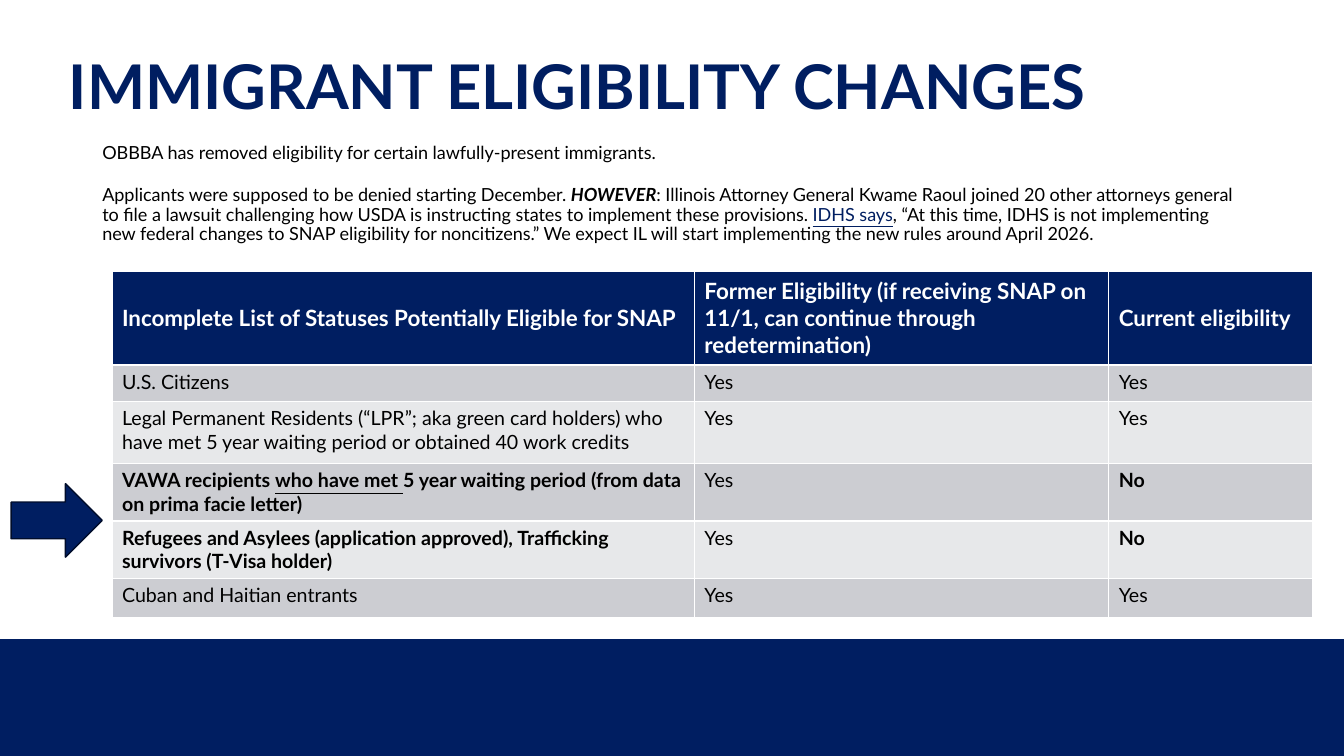
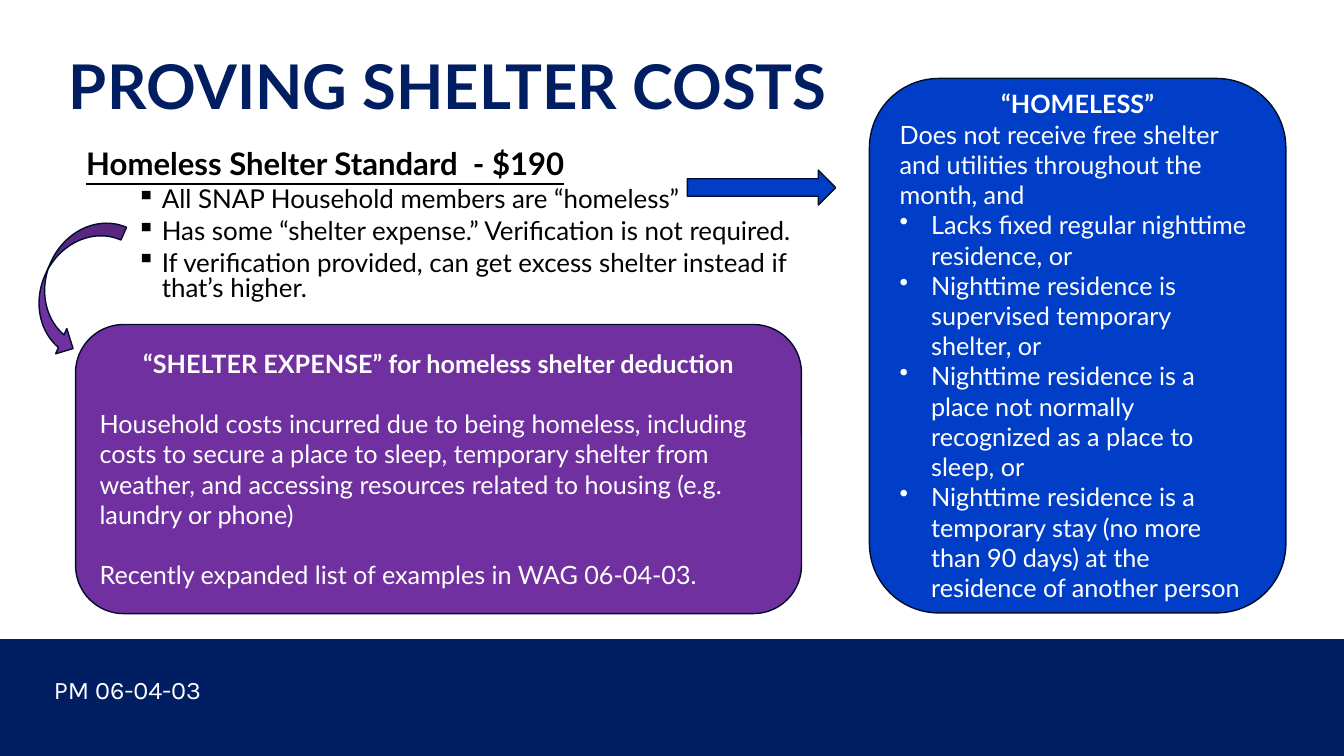
from dataclasses import dataclass

from lxml.etree import SubElement
from pptx import Presentation
from pptx.dml.color import RGBColor as Rgb
from pptx.enum.shapes import MSO_SHAPE as Shape
from pptx.enum.text import MSO_ANCHOR as Anchor, MSO_AUTO_SIZE as AutoSize, PP_ALIGN as Align
from pptx.oxml.ns import qn
from pptx.util import Pt


@dataclass(frozen=True)
class Theme:
    font: str = "Lato"
    footer_font: str = "Karla"
    navy: str = "001E61"
    blue: str = "003EC8"
    purple: str = "7030A0"
    outline: str = "000D2B"
    white: str = "FFFFFF"
    black: str = "000000"
    bands: tuple = ("CCCDD2", "E7E8EA")
    title: float = 44
    heading: float = 22.2
    bullet: float = 18.5
    panel: float = 18
    header: float = 16
    cell: float = 14
    intro: float = 12.9


THEME = Theme()

INTRO = [
    ["OBBBA has removed eligibility for certain lawfully-present immigrants."],
    [
        "Applicants were supposed to be denied starting December. ",
        ("HOWEVER", {"bold": True, "italic": True}),
        ": Illinois Attorney General Kwame Raoul joined 20 other attorneys general to file a "
        "lawsuit challenging how USDA is instructing states to implement these provisions. ",
        ("IDHS says", {"underline": True, "color": THEME.navy}),
        ", “At this time, IDHS is not implementing new federal changes to SNAP eligibility for "
        "noncitizens.” We expect IL will start implementing the new rules around April 2026.",
    ],
]

STATUS_HEADERS = [
    "Incomplete List of Statuses Potentially Eligible for SNAP",
    "Former Eligibility (if receiving SNAP on 11/1, can continue through redetermination)",
    "Current eligibility",
]
STATUSES = [
    (["U.S. Citizens"], "Yes"),
    (["Legal Permanent Residents (“LPR”; aka green card holders) who have met 5 year "
      "waiting period or obtained 40 work credits"], "Yes"),
    (["VAWA recipients ", ("who have met ", {"underline": True}),
      "5 year waiting period (from data on prima facie letter)"], "No"),
    (["Refugees and Asylees (application approved), Trafficking survivors (T-Visa holder)"], "No"),
    (["Cuban and Haitian entrants"], "Yes"),
]
COLUMN_WIDTHS = [416, 296, 145.5]
ROW_HEIGHTS = [67, 26, 44.5, 41, 41, 28]

SHELTER_RULES = [
    "All SNAP Household members are “homeless”",
    "Has some “shelter expense.” Verification is not required.",
    "If verification provided, can get excess shelter instead if that’s higher.",
]
HOMELESS_TESTS = [
    "Lacks fixed regular nighttime residence, or",
    "Nighttime residence is supervised temporary shelter, or",
    "Nighttime residence is a place not normally recognized as a place to sleep, or",
    "Nighttime residence is a temporary stay (no more than 90 days) at the residence "
    "of another person",
]
EXPENSE_NOTES = [
    "Household costs incurred due to being homeless, including costs to secure a place to "
    "sleep, temporary shelter from weather, and accessing resources related to housing "
    "(e.g. laundry or phone)",
    "Recently expanded list of examples in WAG 06-04-03.",
]


# Text
def set_font(font, color=None, size=None, name=None, **flags):
    if color:
        font.color.rgb = Rgb.from_string(color)
    if size:
        font.size = Pt(size)
    if name:
        font.name = name
    for flag, value in flags.items():
        setattr(font, flag, value)


def set_bullet(para, mark, margin, hanging):
    props = para._p.get_or_add_pPr()
    props.set("marL", str(Pt(margin)))
    props.set("indent", str(-Pt(hanging)))
    SubElement(props, qn("a:buChar")).set("char", mark)


def write_para(para, spans, size, color=THEME.black, align=Align.LEFT, spacing=None,
               before=0, after=0, bullet=None, name=THEME.font, **flags):
    if bullet:
        set_bullet(para, *bullet)
    para.alignment = align
    para.space_before, para.space_after = Pt(before), Pt(after)
    if spacing:
        para.line_spacing = spacing
    set_font(para.font, color, size, name, **flags)
    for item in [spans] if isinstance(spans, str) else spans:
        text, style = (item, {}) if isinstance(item, str) else item
        span = para.add_run()
        span.text = text
        set_font(span.font, **style)


def add_para(frame, spans, size, before=0, **style):
    """Write into the empty first paragraph, or append one with space before it."""
    first = frame.paragraphs[0]
    if first.runs:
        write_para(frame.add_paragraph(), spans, size, before=before, **style)
    else:
        write_para(first, spans, size, **style)


def add_text_box(page, left, top, width, height, wrap=True):
    frame = page.shapes.add_textbox(Pt(left), Pt(top), Pt(width), Pt(height)).text_frame
    frame.word_wrap = wrap
    return frame


# Shapes
def add_block(page, kind, left, top, width, height, fill, outlined=True):
    block = page.shapes.add_shape(kind, Pt(left), Pt(top), Pt(width), Pt(height))
    block.shadow.inherit = False
    block.fill.solid()
    block.fill.fore_color.rgb = Rgb.from_string(fill)
    if outlined:
        block.line.color.rgb = Rgb.from_string(THEME.outline)
        block.line.width = Pt(1)
    else:
        block.line.fill.background()
    return block


def add_panel(page, left, top, width, height, fill, heading):
    panel = add_block(page, Shape.ROUNDED_RECTANGLE, left, top, width, height, fill)
    frame = panel.text_frame
    frame.word_wrap = True
    frame.vertical_anchor = Anchor.MIDDLE
    add_para(frame, heading, THEME.panel, color=THEME.white, align=Align.CENTER, bold=True)
    return frame


def add_page(deck, title):
    page = deck.slides.add_slide(deck.slide_layouts[5])
    add_block(page, Shape.RECTANGLE, 0, 456.5, 960, 83.5, THEME.navy, outlined=False)
    box = page.shapes.title
    box.left, box.top, box.width, box.height = Pt(42), Pt(12), Pt(828), Pt(104.5)
    frame = box.text_frame
    frame.auto_size = AutoSize.NONE
    frame.vertical_anchor = Anchor.MIDDLE
    add_para(frame, title, THEME.title, color=THEME.navy, spacing=0.9, bold=True)
    return page


# Table
def fill_cell(cell, spans, size, fill, **style):
    cell.fill.solid()
    cell.fill.fore_color.rgb = Rgb.from_string(fill)
    add_para(cell.text_frame, spans, size, **style)


def add_status_table(page, left, top):
    table = page.shapes.add_table(
        len(ROW_HEIGHTS), len(COLUMN_WIDTHS), Pt(left), Pt(top),
        Pt(sum(COLUMN_WIDTHS)), Pt(sum(ROW_HEIGHTS))).table
    for column, width in zip(table.columns, COLUMN_WIDTHS):
        column.width = Pt(width)
    for row, height in zip(table.rows, ROW_HEIGHTS):
        row.height = Pt(height)
    for index, header in enumerate(STATUS_HEADERS):
        cell = table.cell(0, index)
        cell.vertical_anchor = Anchor.MIDDLE
        fill_cell(cell, header, THEME.header, THEME.navy, color=THEME.white, bold=True)
    for number, (status, current) in enumerate(STATUSES):
        lost = current == "No"
        columns = [(status, lost), ("Yes", False), (current, lost)]
        for index, (spans, bold) in enumerate(columns):
            fill_cell(table.cell(number + 1, index), spans, THEME.cell,
                      THEME.bands[number % 2], bold=bold)


# Slides
def build_immigrant_page(deck):
    page = add_page(deck, "IMMIGRANT ELIGIBILITY CHANGES")
    intro = add_text_box(page, 66, 99.5, 828, 88)
    for spans in INTRO:
        add_para(intro, spans, THEME.intro, spacing=0.9, before=10, after=6)
    add_status_table(page, 80, 193.7)
    add_block(page, Shape.RIGHT_ARROW, 8, 345.5, 65, 52.5, THEME.navy)


def build_shelter_page(deck):
    page = add_page(deck, "PROVING SHELTER COSTS")

    # Standard and its conditions
    rules = add_text_box(page, 54.5, 105, 544.5, 127)
    add_para(rules, "Homeless Shelter Standard  - $190", THEME.heading, spacing=0.8,
             bold=True, underline=True)
    for rule in SHELTER_RULES:
        add_para(rules, rule, THEME.bullet, spacing=0.8, before=5, bullet=("▪", 54, 18))

    # Reference in the footer band
    footer = add_text_box(page, 31.5, 478, 119.5, 29, wrap=False)
    add_para(footer, "PM 06-04-03", THEME.panel, color=THEME.white, name=THEME.footer_font)

    # Definitions
    homeless = add_panel(page, 621, 56, 297.5, 381.8, THEME.blue, "“HOMELESS”")
    add_para(homeless, "Does not receive free shelter and utilities throughout the month, and",
             THEME.panel, color=THEME.white)
    for test in HOMELESS_TESTS:
        add_para(homeless, test, THEME.panel, color=THEME.white, bullet=("•", 22.5, 22.5))
    expense = add_panel(page, 54, 231.8, 518.5, 206.5, THEME.purple,
                        "“SHELTER EXPENSE” for homeless shelter deduction")
    for note in EXPENSE_NOTES:
        add_para(expense, note, THEME.panel, color=THEME.white, before=21.6)

    # Arrows from conditions to definitions
    add_block(page, Shape.RIGHT_ARROW, 491, 121.5, 106, 25, THEME.blue)
    curve = add_block(page, Shape.CURVED_RIGHT_ARROW, 31.5, 150, 39.5, 104.5, THEME.purple)
    curve.rotation = 23.8


def main():
    deck = Presentation()
    deck.slide_width, deck.slide_height = Pt(960), Pt(540)
    build_immigrant_page(deck)
    build_shelter_page(deck)
    deck.save("out.pptx")


if __name__ == "__main__":
    main()
